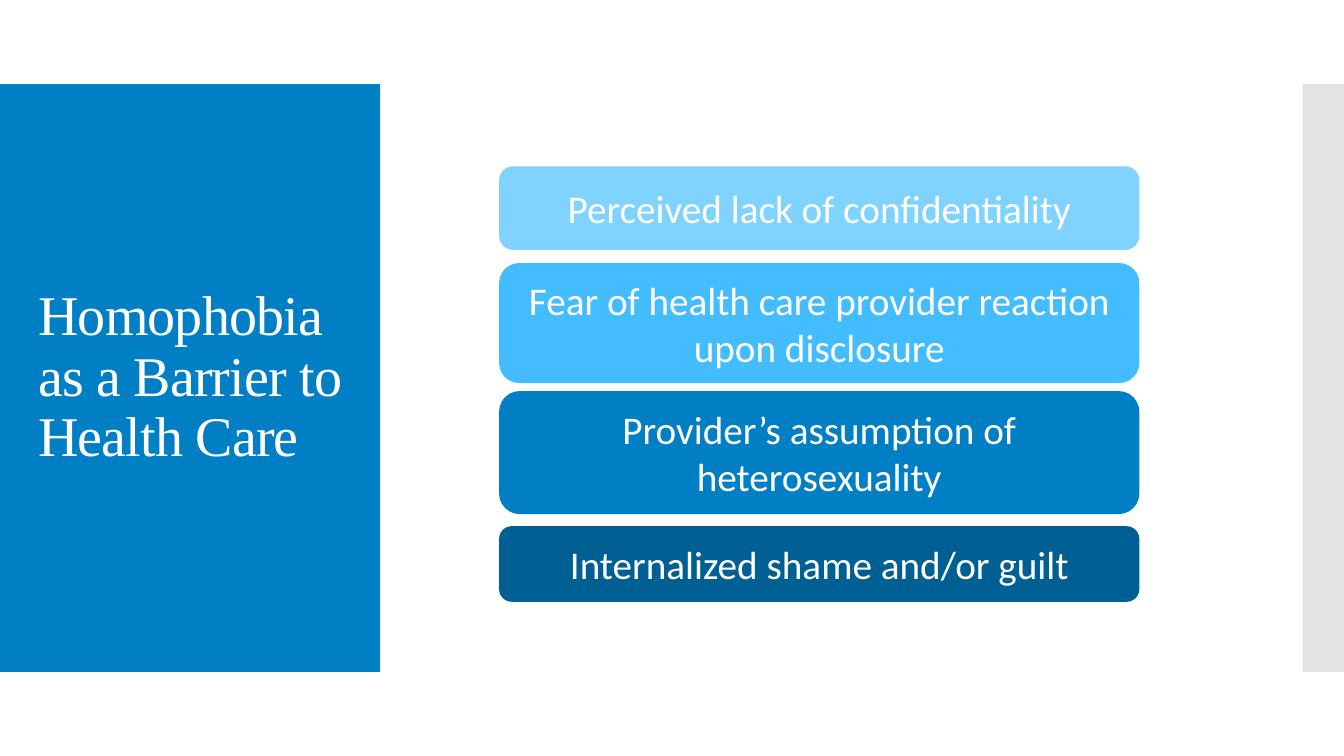
import pptx
import pptx.dml.color
import pptx.enum.shapes
import pptx.enum.text
import pptx.oxml
import pptx.oxml.ns
import pptx.util

WIDTH, HEIGHT = 13.33, 7.5
BAND_TOP, BAND_HEIGHT = HEIGHT / 9, HEIGHT * 7 / 9
WHITE, BLUE, GREY = "FFFFFF", "007FC4", "C8C8C8"
BARRIERS = [
    ("Perceived lack of confidentiality", "81D3FF", 0, 0.83),
    ("Fear of health care provider reaction upon disclosure", "43BDFF", 0.96, 1.19),
    ("Provider’s assumption of heterosexuality", BLUE, 2.23, 1.22),
    ("Internalized shame and/or guilt", "005F93", 3.57, 0.75),
]


def color(value):
    """Turn a hex string into a colour."""
    return pptx.dml.color.RGBColor.from_string(value)


def add_block(page, kind, box, fill):
    """Add a filled shape without line or shadow."""
    shape = page.shapes.add_shape(kind, *map(pptx.util.Inches, box))
    shape.shadow.inherit = False
    shape.fill.solid()
    shape.fill.fore_color.rgb = color(fill)
    shape.line.fill.background()
    return shape


def write(shape, text, font, size, align, insets):
    """Set one white, vertically centred paragraph in a shape."""
    frame = shape.text_frame
    frame.text = text
    frame.word_wrap = True
    frame.auto_size = pptx.enum.text.MSO_AUTO_SIZE.NONE
    frame.vertical_anchor = pptx.enum.text.MSO_ANCHOR.MIDDLE
    frame.margin_left = frame.margin_right = pptx.util.Inches(insets[0])
    frame.margin_top = frame.margin_bottom = pptx.util.Inches(insets[1])
    para = frame.paragraphs[0]
    para.alignment = align
    span = para.runs[0]
    span.font.name = font
    span.font.size = pptx.util.Pt(size)
    span.font.color.rgb = color(WHITE)
    return para


def add_title_panel(page, box):
    """Place the slide title on a blue panel."""
    left, top, width, height = box
    panel = add_block(page, pptx.enum.shapes.MSO_SHAPE.RECTANGLE, box, BLUE)
    title = page.shapes.title
    title.element.addprevious(panel.element)
    title.left, title.top = pptx.util.Inches(left + 0.28), pptx.util.Inches(top + 0.4)
    title.width, title.height = pptx.util.Inches(width - 0.55), pptx.util.Inches(height - 0.8)
    para = write(title, "Homophobia as a Barrier to Health Care", "Times New Roman", 40,
                 pptx.enum.text.PP_ALIGN.LEFT, (0.1, 0.05))
    para.line_spacing = 0.9
    para.runs[0].font._element.set("spc", "-60")


def add_edge_bar(page, box):
    """Add the half-transparent grey bar at the slide's edge."""
    bar = add_block(page, pptx.enum.shapes.MSO_SHAPE.RECTANGLE, box, GREY)
    tint = bar.element.find(".//" + pptx.oxml.ns.qn("a:srgbClr"))
    alpha = pptx.oxml.parse_xml(f'<a:alpha {pptx.oxml.ns.nsdecls("a")} val="50000"/>')
    tint.append(alpha)


def add_barriers(page, box):
    """Stack the rounded barrier boxes from the top of the box."""
    left, top, width = box
    for text, fill, offset, height in BARRIERS:
        barrier = add_block(page, pptx.enum.shapes.MSO_SHAPE.ROUNDED_RECTANGLE,
                            (left, top + offset, width, height), fill)
        write(barrier, text, "Calibri", 28, pptx.enum.text.PP_ALIGN.CENTER, (0.1, 0.3))


def main():
    """Build and save the slide."""
    deck = pptx.Presentation()
    deck.slide_width = pptx.util.Inches(WIDTH)
    deck.slide_height = pptx.util.Inches(HEIGHT)
    page = deck.slides.add_slide(deck.slide_layouts[5])
    add_title_panel(page, (0, BAND_TOP, 3.77, BAND_HEIGHT))
    add_edge_bar(page, (WIDTH - 0.41, BAND_TOP, 0.41, BAND_HEIGHT))
    add_barriers(page, (4.95, 1.65, 6.35))
    deck.save("out.pptx")


if __name__ == "__main__":
    main()
